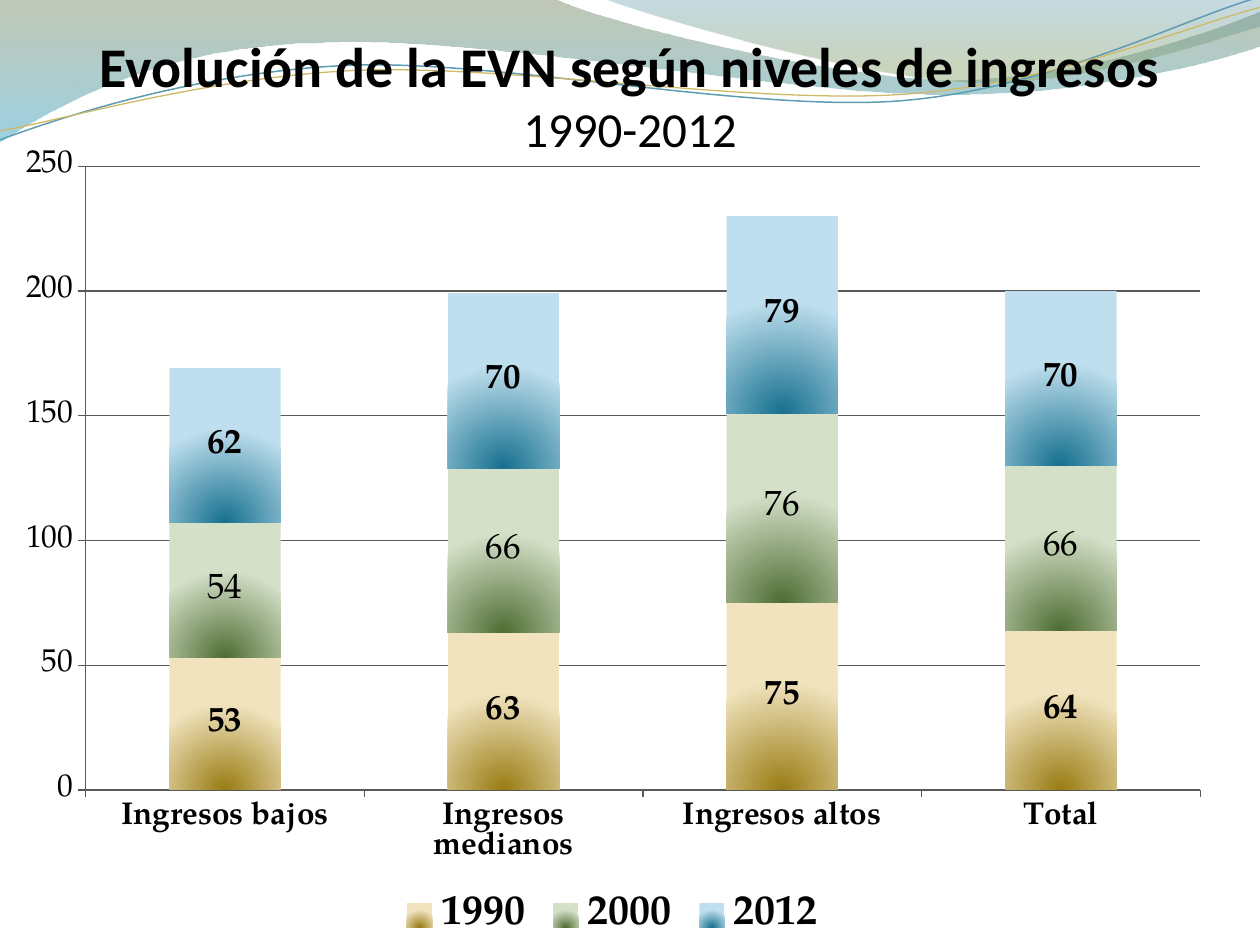
from lxml import etree
from pptx import Presentation
from pptx.chart.data import CategoryChartData
from pptx.dml.color import RGBColor
from pptx.enum.chart import XL_CHART_TYPE, XL_LABEL_POSITION, XL_LEGEND_POSITION, XL_TICK_MARK
from pptx.enum.text import MSO_ANCHOR, PP_ALIGN
from pptx.oxml import parse_xml
from pptx.oxml.ns import nsdecls, qn
from pptx.util import Cm, Pt

STACKED = XL_CHART_TYPE.COLUMN_STACKED
LABEL_CENTER = XL_LABEL_POSITION.CENTER
LEGEND_BOTTOM = XL_LEGEND_POSITION.BOTTOM
TICK_OUTSIDE = XL_TICK_MARK.OUTSIDE
ANCHOR_BOTTOM = MSO_ANCHOR.BOTTOM
ALIGN_CENTER = PP_ALIGN.CENTER

BLACK = RGBColor(0x00, 0x00, 0x00)
AXIS_GRAY = RGBColor(0x59, 0x59, 0x59)
OLIVE = RGBColor(0x74, 0x85, 0x5E)
SKY = RGBColor(0x4A, 0xAC, 0xCE)
TEAL = RGBColor(0x45, 0x88, 0x9F)
SAGE = RGBColor(0x8A, 0xA3, 0x6D)
WAVE_BLUE = RGBColor(0x5E, 0x9C, 0xB1)
WAVE_GOLD = RGBColor(0xCE, 0xB9, 0x66)
GOLD_DARK = RGBColor(0x9A, 0x7C, 0x14)
GOLD_LIGHT = RGBColor(0xF0, 0xE3, 0xBD)
GREEN_DARK = RGBColor(0x4F, 0x6D, 0x33)
GREEN_LIGHT = RGBColor(0xD4, 0xE0, 0xC8)
BLUE_DARK = RGBColor(0x16, 0x70, 0x8F)
BLUE_LIGHT = RGBColor(0xBF, 0xDF, 0xEE)

TITLE_FONT = "Calibri"
CHART_FONT = "TeX Gyre Pagella"
WAVE_ROTATION = 357.3
FIRST_WAVE_ID = 100

BANDS = [
    ((0, -0.03), [
        [(11.18, -0.03)],
        [(12.09, 0.43), (16.87, 1.6), (19.25, 1.6)],
        [(21.67, 1.6), (24.33, 0.66), (25.4, 0.23)],
        [(25.43, 0.91)],
        [(24.97, 1.12), (22.1, 1.93), (18.95, 1.9)],
        [(15.8, 1.9), (9.7, 0.71), (6.53, 0.86)],
        [(3.28, 0.89), (1.17, 2.11), (-0.03, 2.87)],
    ], [(0, OLIVE, 45), (1, SKY, 55)]),
    ((12.17, -0.03), [
        [(12.93, 0.28), (17.32, 1.57), (19.53, 1.65)],
        [(21.74, 1.75), (24.41, 0.81), (25.4, 0.53)],
        [(25.4, 0)],
    ], [(0, TEAL, 30), (0.8, SAGE, 45)]),
]
WAVES = [
    ((-0.05, 2.22), [
        [(1.19, 1.82), (4.02, 1.04), (7.05, 1.05)],
        [(10.05, 1.07), (15.02, 2.37), (18.08, 2.29)],
        [(21.13, 2.2), (23.87, 0.91), (25.41, 0.55)],
    ], WAVE_BLUE, 0.85),
    ((-0.04, 2.04), [
        [(1.16, 1.9), (4.18, 1.15), (7.2, 1.16)],
        [(10.25, 1.18), (15.13, 2.23), (18.19, 2.16)],
        [(21.21, 2.1), (23.93, 1.06), (25.45, 0.75)],
    ], WAVE_GOLD, 0.75),
]
CATEGORIES = ["Ingresos bajos", "Ingresos medianos", "Ingresos altos", "Total"]
SERIES = [
    ("1990", (53, 63, 75, 64), GOLD_DARK, GOLD_LIGHT, True),
    ("2000", (54, 66, 76, 66), GREEN_DARK, GREEN_LIGHT, False),
    ("2012", (62, 70, 79, 70), BLUE_DARK, BLUE_LIGHT, True),
]
PLOT_LAYOUT = {"x": 0.07, "y": 0.04, "w": 0.91, "h": 0.77}


def set_attributes(target, values):
    """Set every attribute named in a dict of values."""
    for name, value in values.items():
        setattr(target, name, value)


class SlideBuilder:
    """Hold the style and the current slide, and draw each kind of element."""

    def __init__(self, presentation):
        """Add a title-only slide."""
        self.master = presentation.slide_master
        self.master_front = self.master.shapes[0].element
        self.slide = presentation.slides.add_slide(presentation.slide_layouts[5])

    def style_font(self, font, size, bold=False, name=CHART_FONT):
        """Apply the slide's text style to a font."""
        set_attributes(font, {"name": name, "size": Pt(size), "bold": bold})
        font.color.rgb = BLACK

    def gradient(self, fill, stops):
        """Fill with two gradient stops given as position and colour."""
        fill.gradient()
        for stop, (position, color) in zip(fill.gradient_stops, stops):
            stop.position = position
            stop.color.rgb = color

    def curve(self, start, segments, closed):
        """Draw an outline of straight and cubic segments behind the master's placeholders."""
        anchors = [(Cm(x), Cm(y)) for x, y in [start, *(segment[-1] for segment in segments)]]
        builder = self.slide.shapes.build_freeform(*anchors[0], scale=1.0)
        builder.add_line_segments(anchors[1:], close=closed)
        shape = builder.convert_to_shape()
        shape.shadow.inherit = False
        left, top = (min(values) for values in zip(*anchors))
        for line, segment in zip(list(shape.element.iter(qn("a:lnTo"))), segments):
            if len(segment) == 3:
                cubic = etree.Element(qn("a:cubicBezTo"))
                for x, y in segment:
                    etree.SubElement(cubic, qn("a:pt"), x=str(Cm(x) - left), y=str(Cm(y) - top))
                line.getparent().replace(line, cubic)
        identity = FIRST_WAVE_ID + len(self.master.shapes)
        shape.element.find(".//" + qn("p:cNvPr")).set("id", str(identity))
        self.master_front.addprevious(shape.element)
        return shape

    def band(self, start, segments, stops):
        """Draw a translucent band with a vertical gradient."""
        shape = self.curve(start, segments, True)
        self.gradient(shape.fill, [stop[:2] for stop in stops])
        shape.fill.gradient_angle = 270
        for color, stop in zip(shape.element.iter(qn("a:srgbClr")), stops):
            etree.SubElement(color, qn("a:alpha"), val=str(stop[2] * 1000))
        shape.line.fill.background()

    def wave(self, start, segments, color, width):
        """Draw a thin wavy line."""
        shape = self.curve(start, segments, False)
        shape.rotation = WAVE_ROTATION
        shape.fill.background()
        shape.line.color.rgb = color
        shape.line.width = Pt(width)

    def title(self, heading, period):
        """Place the two-line title."""
        shape = self.slide.shapes.title
        set_attributes(shape, {"left": Cm(0), "top": Cm(0), "width": Cm(25.4), "height": Cm(3.18)})
        set_attributes(shape.text_frame, {
            "margin_left": Cm(0), "margin_top": Cm(0.13), "margin_right": Cm(0),
            "margin_bottom": Cm(0), "vertical_anchor": ANCHOR_BOTTOM, "word_wrap": True,
        })
        paragraph = shape.text_frame.paragraphs[0]
        paragraph.alignment = ALIGN_CENTER
        for text, size, bold in ((heading, 32, True), (period, 28, False)):
            if paragraph.runs:
                paragraph.add_line_break()
            run = paragraph.add_run()
            run.text = text
            self.style_font(run.font, size, bold, TITLE_FONT)

    def chart(self):
        """Draw the stacked column chart."""
        data = CategoryChartData()
        data.categories = CATEGORIES
        for name, values, *_ in SERIES:
            data.add_series(name, values)
        chart = self.slide.shapes.add_chart(
            STACKED, Cm(0), Cm(2.7), Cm(24.69), Cm(16.33), data).chart
        chart.has_title = False
        self.style_font(chart.font, 18)
        plot = chart.plots[0]
        set_attributes(plot, {"gap_width": 150, "overlap": 100, "vary_by_categories": False})
        for series, (_, _, dark, light, bold) in zip(plot.series, SERIES):
            self.gradient(series.format.fill, [(0, dark), (1, light)])
            labels = series.data_labels
            set_attributes(labels, {"show_value": True, "position": LABEL_CENTER})
            self.style_font(labels.font, 20, bold)
        for linear in list(chart.element.iter(qn("a:lin"))):
            linear.getparent().replace(linear, parse_xml(
                f'<a:path {nsdecls("a")} path="circle">'
                '<a:fillToRect l="50000" t="100000" r="50000" b="0"/></a:path>'))
        for axis, bold in ((chart.category_axis, True), (chart.value_axis, False)):
            axis.major_tick_mark = TICK_OUTSIDE
            axis.format.line.color.rgb = AXIS_GRAY
            self.style_font(axis.tick_labels.font, 18, bold)
        set_attributes(chart.value_axis, {
            "minimum_scale": 0, "maximum_scale": 250, "major_unit": 50, "has_major_gridlines": True})
        chart.value_axis.major_gridlines.format.line.color.rgb = AXIS_GRAY
        chart.has_legend = True
        set_attributes(chart.legend, {"position": LEGEND_BOTTOM, "include_in_layout": False})
        self.style_font(chart.legend.font, 24, True)
        self.plot_layout(chart)

    def plot_layout(self, chart):
        """Fix the inner plot area inside the chart."""
        area = chart.element.find(".//" + qn("c:plotArea"))
        for layout in area.findall(qn("c:layout")):
            area.remove(layout)
        layout = etree.Element(qn("c:layout"))
        manual = etree.SubElement(layout, qn("c:manualLayout"))
        values = {"layoutTarget": "inner", "xMode": "edge", "yMode": "edge", **PLOT_LAYOUT}
        for name, value in values.items():
            etree.SubElement(manual, qn("c:" + name), val=str(value))
        area.insert(0, layout)


def main():
    """Build the slide and save it."""
    presentation = Presentation()
    set_attributes(presentation, {"slide_width": Cm(25.4), "slide_height": Cm(19.05)})
    builder = SlideBuilder(presentation)
    for band in BANDS:
        builder.band(*band)
    for wave in WAVES:
        builder.wave(*wave)
    builder.title("Evolución de la EVN según niveles de ingresos", "1990-2012")
    builder.chart()
    presentation.save("out.pptx")


if __name__ == "__main__":
    main()
